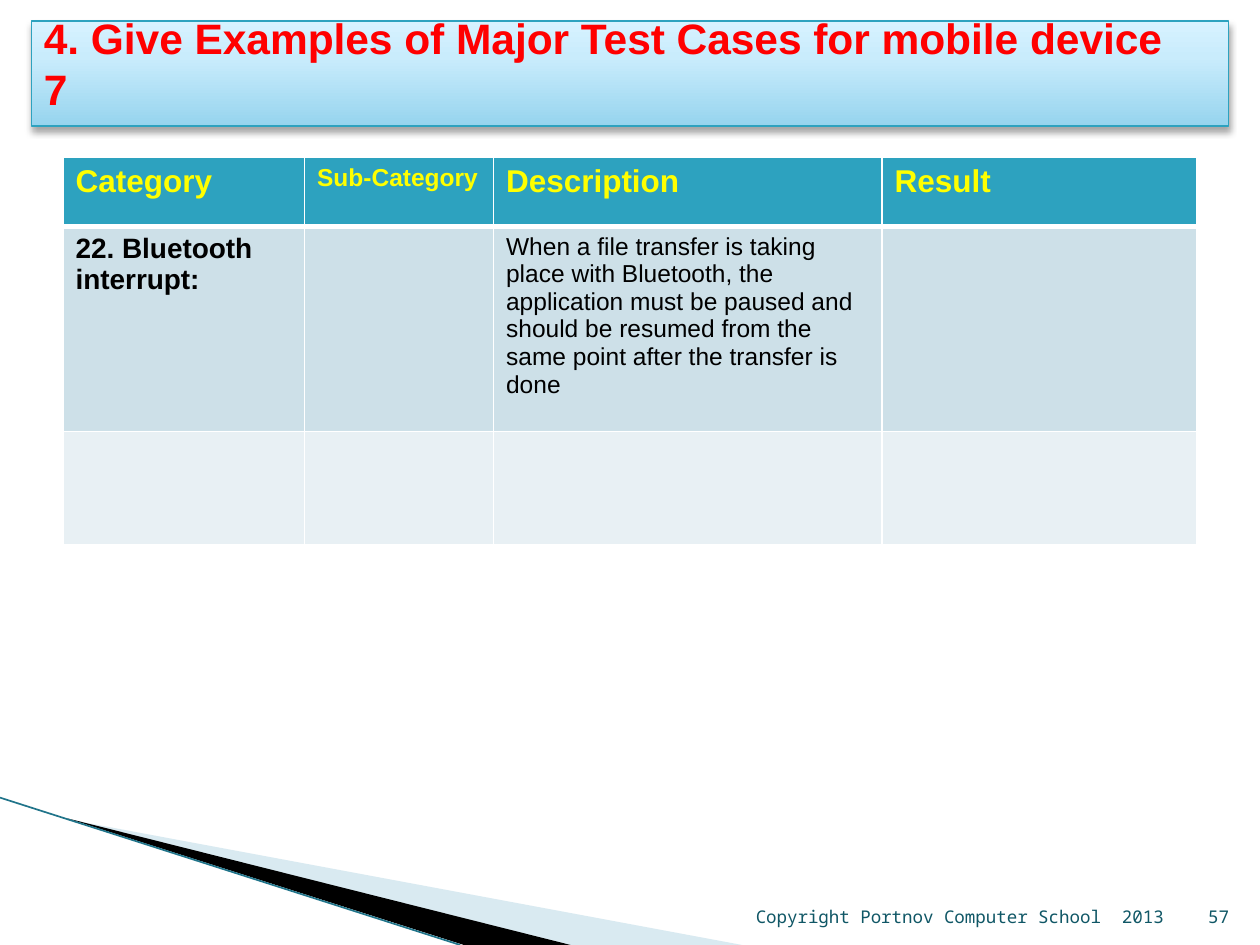
from lxml import etree
from pptx import Presentation
from pptx.dml.color import RGBColor
from pptx.enum.shapes import MSO_CONNECTOR, MSO_SHAPE
from pptx.enum.text import MSO_ANCHOR, PP_ALIGN
from pptx.oxml import parse_xml
from pptx.oxml.ns import nsdecls, qn
from pptx.util import Pt

RECTANGLE = MSO_SHAPE.RECTANGLE
STRAIGHT = MSO_CONNECTOR.STRAIGHT
MIDDLE, BOTTOM = MSO_ANCHOR.MIDDLE, MSO_ANCHOR.BOTTOM
LEFT, RIGHT = PP_ALIGN.LEFT, PP_ALIGN.RIGHT

TEAL, WHITE, BLACK, YELLOW = "2DA2BF", "FFFFFF", "000000", "FFFF00"
COLUMN_WIDTHS = [138, 108, 222, 180]
ROW_HEIGHTS = [39.6, 117, 64.8]
ROW_FILLS = [TEAL, "CDE0E8", "E8F0F4"]
HEADINGS = [("Category", 18), ("Sub-Category", 14), ("Description", 18), ("Result", 18)]
TITLE = "4. Give Examples of Major Test Cases for mobile device\v7"
TRANSFER_RULE = (
    "When a file transfer is taking place with Bluetooth, the application must be "
    "paused and should be resumed from the same point after the transfer is done"
)


def color(hex_code):
    return RGBColor.from_string(hex_code)


def write(frame, text, size, hex_code, font="Arial", bold=False, align=LEFT):
    frame.text = text
    paragraph = frame.paragraphs[0]
    paragraph.alignment = align
    for run in paragraph.runs:
        run.font.name = font
        run.font.size = Pt(size)
        run.font.bold = bold
        run.font.color.rgb = color(hex_code)


def add_wedge(slide, points, hex_code, opacity=100):
    start, *rest = [(Pt(x), Pt(y)) for x, y in points]
    builder = slide.shapes.build_freeform(*start)
    builder.add_line_segments(rest)
    wedge = builder.convert_to_shape()
    wedge.shadow.inherit = False
    wedge.fill.solid()
    wedge.fill.fore_color.rgb = color(hex_code)
    wedge.line.fill.background()
    if opacity < 100:
        tint = wedge._element.spPr.find(f"{qn('a:solidFill')}/{qn('a:srgbClr')}")
        etree.SubElement(tint, qn("a:alpha")).set("val", str(opacity * 1000))


def add_edge(slide, start, end, hex_code, width):
    edge = slide.shapes.add_connector(STRAIGHT, *map(Pt, start + end))
    edge.line.color.rgb = color(hex_code)
    edge.line.width = Pt(width)
    etree.SubElement(edge._element.spPr, qn("a:effectLst"))


def add_title(slide):
    banner = slide.shapes.add_shape(RECTANGLE, Pt(18), Pt(12), Pt(684), Pt(60))
    stops = "".join(
        f'<a:gs pos="{position * 1000}"><a:srgbClr val="{shade}"/></a:gs>'
        for position, shade in [(0, "96D4EE"), (65, "C9ECFC"), (100, "D7F2FF")]
    )
    properties = banner._element.spPr
    properties.insert(2, parse_xml(
        f'<a:gradFill {nsdecls("a")}><a:gsLst>{stops}</a:gsLst>'
        '<a:lin ang="16200000" scaled="0"/></a:gradFill>'
    ))
    banner.line.color.rgb = color(TEAL)
    banner.line.width = Pt(0.75)
    banner.shadow.inherit = False
    properties.find(qn("a:effectLst")).append(parse_xml(
        f'<a:outerShdw {nsdecls("a")} blurRad="{Pt(4)}" dist="{Pt(3)}" dir="5400000" '
        'rotWithShape="0"><a:srgbClr val="000000"><a:alpha val="35000"/></a:srgbClr>'
        '</a:outerShdw>'
    ))
    frame = banner.text_frame
    frame.word_wrap = True
    frame.vertical_anchor = MIDDLE
    frame.margin_top, frame.margin_bottom = Pt(0), Pt(12)
    write(frame, TITLE, 24.3, "FF0000", bold=True)


def set_borders(cell, top, bottom):
    for side, width in [("L", 1), ("R", 1), ("T", top), ("B", bottom)]:
        cell._tc.get_or_add_tcPr().append(parse_xml(
            f'<a:ln{side} {nsdecls("a")} w="{Pt(width)}"><a:solidFill>'
            f'<a:srgbClr val="{WHITE}"/></a:solidFill></a:ln{side}>'
        ))


def add_test_cases(slide):
    table = slide.shapes.add_table(
        len(ROW_HEIGHTS), len(COLUMN_WIDTHS),
        Pt(36), Pt(90), Pt(sum(COLUMN_WIDTHS)), Pt(sum(ROW_HEIGHTS)),
    ).table
    for column, width in zip(table.columns, COLUMN_WIDTHS):
        column.width = Pt(width)
    for index, (row, height) in enumerate(zip(table.rows, ROW_HEIGHTS)):
        row.height = Pt(height)
        for cell in row.cells:
            set_borders(cell, 3 if index == 1 else 1, 3 if index == 0 else 1)
            cell.fill.solid()
            cell.fill.fore_color.rgb = color(ROW_FILLS[index])
    for index, (heading, size) in enumerate(HEADINGS):
        write(table.cell(0, index).text_frame, heading, size, YELLOW, bold=True)
    write(table.cell(1, 0).text_frame, "22. Bluetooth interrupt:", 16, BLACK, bold=True)
    write(table.cell(1, 2).text_frame, TRANSFER_RULE, 14, BLACK)


def add_footer(slide, left, width, text):
    footer = slide.shapes.add_textbox(Pt(left), Pt(504.7), Pt(width), Pt(28.8))
    frame = footer.text_frame
    frame.word_wrap = True
    frame.vertical_anchor = BOTTOM
    frame.margin_left = frame.margin_right = Pt(0)
    write(frame, text, 10, "105766", font="Noto Sans Mono", align=RIGHT)


def main():
    presentation = Presentation()
    presentation.slide_width, presentation.slide_height = Pt(720), Pt(540)
    slide = presentation.slides.add_slide(presentation.slide_layouts[6])
    add_wedge(slide, [(39.6, 468.4), (424, 540), (326, 540)], "A0CBDC", opacity=40)
    add_wedge(slide, [(38.2, 467.6), (326, 540), (265, 540)], BLACK)
    add_edge(slide, (0, 455.8), (263, 540), "20748A", 0.95)
    add_test_cases(slide)
    add_footer(slide, 344.9, 320, "Copyright Portnov Computer School  2013")
    add_footer(slide, 671.8, 30.5, "57")
    add_title(slide)
    presentation.save("out.pptx")


if __name__ == "__main__":
    main()
